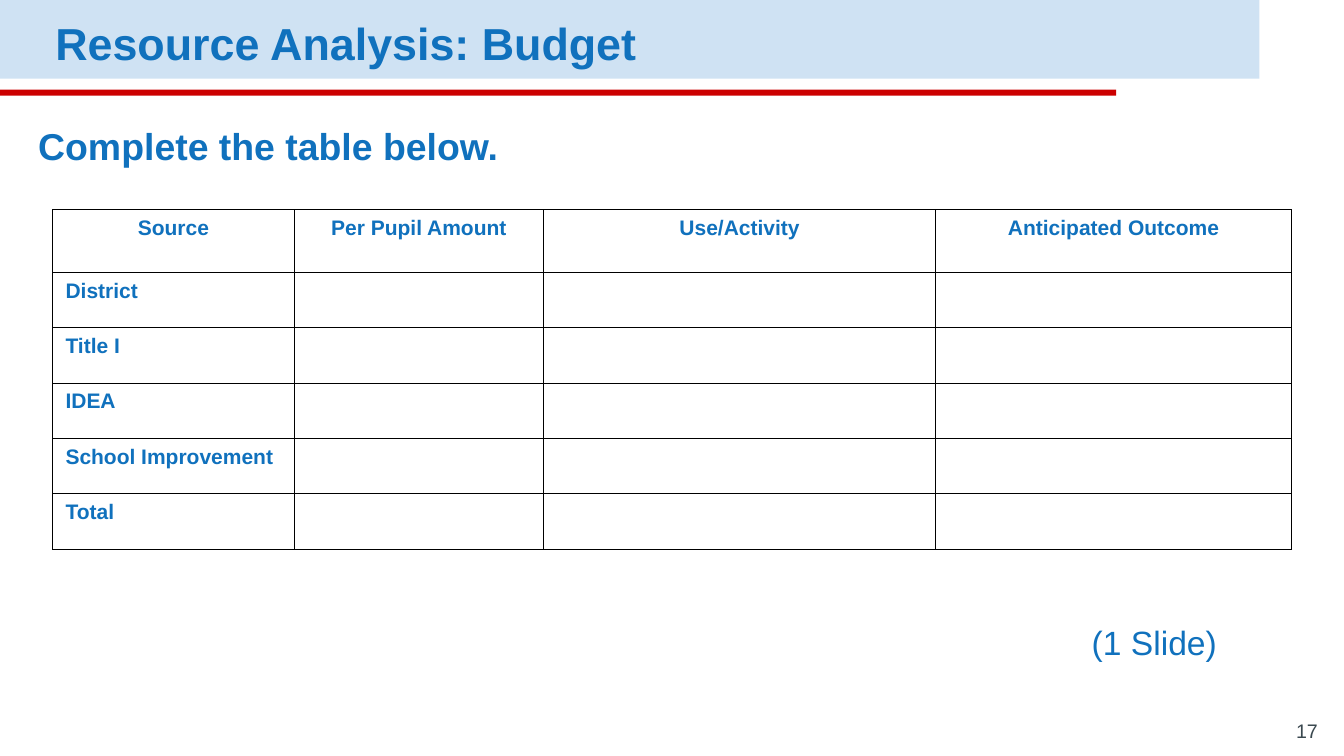
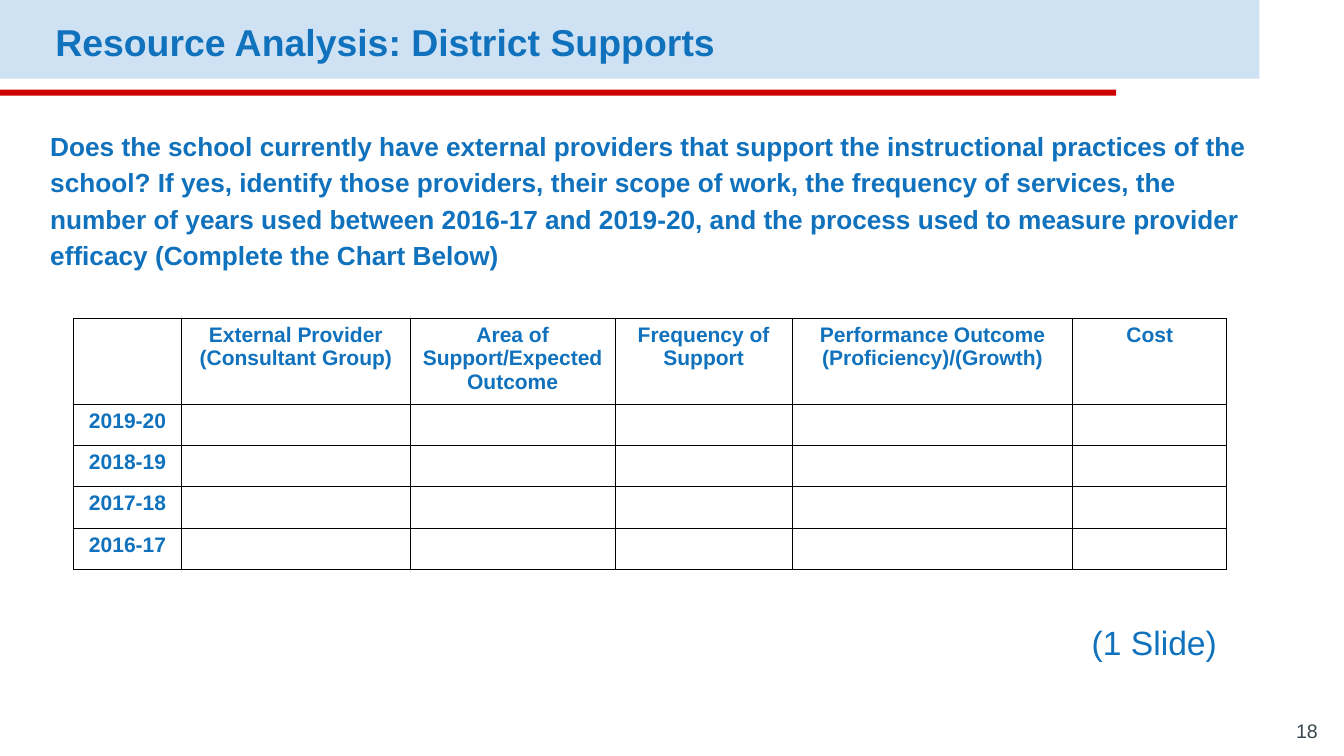
from lxml import etree
from pptx import Presentation
from pptx.dml.color import RGBColor
from pptx.enum.shapes import MSO_SHAPE
from pptx.enum.text import MSO_ANCHOR, PP_ALIGN
from pptx.oxml.ns import qn
from pptx.util import Inches, Pt

RECT = MSO_SHAPE.RECTANGLE
TOP, MIDDLE, BOTTOM = MSO_ANCHOR.TOP, MSO_ANCHOR.MIDDLE, MSO_ANCHOR.BOTTOM
LEFT, CENTER, RIGHT = PP_ALIGN.LEFT, PP_ALIGN.CENTER, PP_ALIGN.RIGHT

FONT = "Arial"
COLORS = {
    "band": "CFE2F3",
    "rule": "CC0000",
    "text": "1071BD",
    "number": "3A484F",
    "border": "000000",
}
BORDER_WIDTH = Pt(0.75)


def rgb(name):
    return RGBColor.from_string(COLORS[name])


def style(p, size, bold=False, color="text", align=LEFT):
    p.alignment = align
    p.font.name = FONT
    p.font.size = Pt(size)
    p.font.bold = bold
    p.font.color.rgb = rgb(color)


def add_bar(slide, width, top, height, color):
    """Draw a filled bar that starts at the left edge of the slide."""
    sp = slide.shapes.add_shape(RECT, 0, Inches(top), Inches(width), Inches(height))
    sp.shadow.inherit = False
    sp.fill.solid()
    sp.fill.fore_color.rgb = rgb(color)
    sp.line.fill.background()


def add_text(slide, box, text, size, anchor=TOP, inset=0.1, spacing=None, **look):
    tf = slide.shapes.add_textbox(*map(Inches, box)).text_frame
    tf.word_wrap = True
    tf.vertical_anchor = anchor
    tf.margin_left = tf.margin_right = Inches(0.1)
    tf.margin_top = tf.margin_bottom = Inches(inset)
    p = tf.paragraphs[0]
    p.text = text
    p.line_spacing = spacing
    style(p, size, **look)


def set_borders(cell):
    tc_pr = cell._tc.get_or_add_tcPr()
    for i, side in enumerate(("lnL", "lnR", "lnT", "lnB")):
        ln = etree.Element(qn(f"a:{side}"), w=str(BORDER_WIDTH))
        fill = etree.SubElement(ln, qn("a:solidFill"))
        etree.SubElement(fill, qn("a:srgbClr"), val=COLORS["border"])
        tc_pr.insert(i, ln)


def add_grid(slide, left, top, widths, heights, header, labels, margins, label_align):
    """Add a form table with a header row, row labels and empty cells."""
    table = slide.shapes.add_table(
        len(heights), len(widths), Inches(left), Inches(top),
        Inches(sum(widths)), Inches(sum(heights))).table
    table.first_row = table.horz_banding = False
    for column, width in zip(table.columns, widths):
        column.width = Inches(width)
    for row, height in zip(table.rows, heights):
        row.height = Inches(height)
    for cell in table.iter_cells():
        cell.fill.background()
        set_borders(cell)
        cell.margin_left = cell.margin_right = Inches(margins[0])
        cell.margin_top = cell.margin_bottom = Inches(margins[1])

    entries = [(0, c, text, CENTER) for c, text in enumerate(header) if text]
    entries += [(r, 0, text, label_align) for r, text in enumerate(labels, 1)]
    for r, c, text, align in entries:
        p = table.cell(r, c).text_frame.paragraphs[0]
        p.text = text
        style(p, 15, bold=True, align=align)


def add_base_slide(prs, title, title_size, number):
    """Add a slide with the bands, title, slide count note and number."""
    slide = prs.slides.add_slide(prs.slide_layouts[6])
    add_bar(slide, 12.49, 0, 0.78, "band")
    add_bar(slide, 11.07, 0.89, 0.06, "rule")
    add_text(slide, (0.45, 0.05, 12.04, 0.66), title, title_size,
             anchor=MIDDLE, spacing=1.15, bold=True)
    add_text(slide, (12.37, 7.13, 0.8, 0.34), str(number), 14,
             anchor=BOTTOM, color="number", align=RIGHT)
    add_text(slide, (10.73, 6.12, 2.33, 0.55), "(1 Slide)", 24, inset=0.05)
    return slide


def add_budget(prs):
    slide = add_base_slide(prs, "Resource Analysis: Budget", 32, 17)
    add_text(slide, (0.28, 1.06, 12.77, 6.24), "Complete the table below.", 26.7,
             spacing=1.15, bold=True)
    add_grid(slide, 0.52, 2.08, [2.4, 2.47, 3.89, 3.53], [0.62] + [0.55] * 5,
             ["Source", "Per Pupil Amount", "Use/Activity", "Anticipated Outcome"],
             ["District", "Title I", "IDEA", "School Improvement", "Total"],
             margins=(0.13, 0.07), label_align=LEFT)


def add_district_supports(prs):
    slide = add_base_slide(prs, "Resource Analysis: District Supports", 26.7, 18)
    question = (
        "Does the school currently have external providers that support the "
        "instructional practices of the school? If yes, identify those providers, "
        "their scope of work, the frequency of services, the number of years used "
        "between 2016-17 and 2019-20, and the process used to measure provider "
        "efficacy (Complete the Chart Below)")
    add_text(slide, (0.4, 1.15, 12.1, 5.47), question, 18.7, spacing=1.15, bold=True)
    add_grid(slide, 0.73, 3.16, [1.07, 2.27, 2.03, 1.76, 2.78, 1.53],
             [0.83] + [0.41] * 4,
             ["", "External Provider (Consultant Group)",
              "Area of Support/Expected Outcome", "Frequency of Support",
              "Performance Outcome (Proficiency)/(Growth)", "Cost"],
             ["2019-20", "2018-19", "2017-18", "2016-17"],
             margins=(0.1, 0.05), label_align=CENTER)


def main():
    prs = Presentation()
    prs.slide_width = Inches(13.33)
    prs.slide_height = Inches(7.5)
    add_budget(prs)
    add_district_supports(prs)
    prs.save("out.pptx")


if __name__ == "__main__":
    main()
